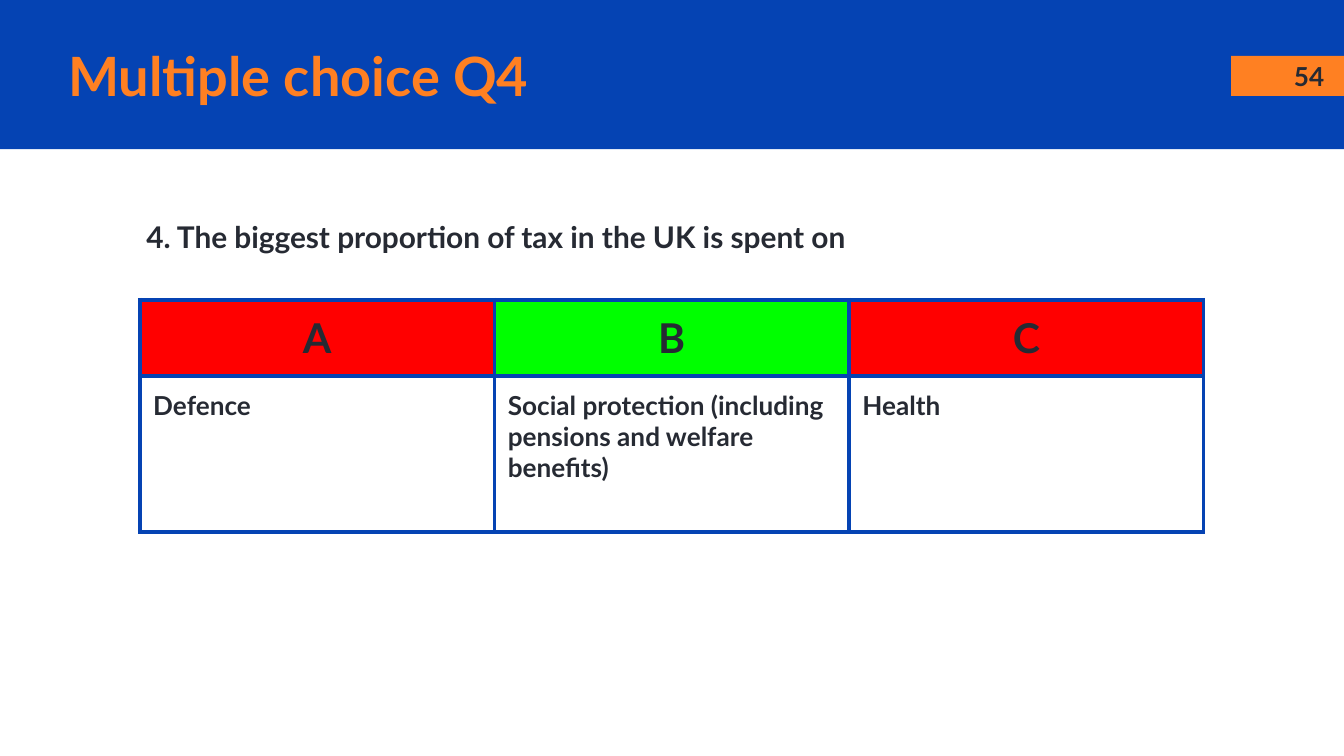
"""Build the multiple choice question slide with its answer table."""
from lxml.etree import SubElement
from pptx import Presentation
from pptx.dml.color import RGBColor
from pptx.enum.shapes import MSO_SHAPE as Shape
from pptx.enum.text import MSO_ANCHOR as Anchor, PP_ALIGN as Align
from pptx.oxml.ns import qn
from pptx.util import Pt

BLUE, ORANGE, DARK = "0543B3", "FF8022", "262A33"
RED, GREEN = "FF0000", "00FF00"
INSET = Pt(7.2)


def color(value):
    return RGBColor.from_string(value)


def write(frame, text, size, ink=DARK, align=Align.LEFT):
    frame.word_wrap = True
    para = frame.paragraphs[0]
    para.alignment = align
    span = para.add_run()
    span.text = text
    span.font.name = "Lato"
    span.font.size = Pt(size)
    span.font.bold = True
    span.font.color.rgb = color(ink)


deck = Presentation()
deck.slide_width, deck.slide_height = Pt(720), Pt(405)
page = deck.slides.add_slide(deck.slide_layouts[6])

for left, top, width, height, fill in [
    (0, 0, 720, 80, BLUE),
    (659.5, 30, 60.5, 21.5, ORANGE),
]:
    band = page.shapes.add_shape(Shape.RECTANGLE, Pt(left), Pt(top), Pt(width), Pt(height))
    band.shadow.inherit = False
    band.fill.solid()
    band.fill.fore_color.rgb = color(fill)
    band.line.fill.background()

for left, top, width, height, text, size, ink, align, anchor in [
    (29.5, 20.2, 629.3, 40.3, "Multiple choice Q4", 29, ORANGE, Align.LEFT, Anchor.MIDDLE),
    (682.6, 31.7, 37.4, 18, "54", 14, DARK, Align.CENTER, Anchor.MIDDLE),
    (71.3, 110.2, 603.4, 60.5, "4. The biggest proportion of tax in the UK is spent on",
     16, DARK, Align.LEFT, Anchor.TOP),
]:
    box = page.shapes.add_textbox(Pt(left), Pt(top), Pt(width), Pt(height))
    frame = box.text_frame
    frame.margin_left = frame.margin_right = INSET
    frame.margin_top = frame.margin_bottom = INSET
    frame.vertical_anchor = anchor
    write(frame, text, size, ink, align)

answers = [
    ("A", "Defence", RED),
    ("B", "Social protection (including pensions and welfare benefits)", GREEN),
    ("C", "Health", RED),
]
table = page.shapes.add_table(2, 3, Pt(74.9), Pt(160.6), Pt(570), Pt(124.5)).table
table.first_row = table.horz_banding = False
for row, height in zip(table.rows, (40.8, 83.7)):
    row.height = Pt(height)

for index, (letter, answer, fill) in enumerate(answers):
    table.columns[index].width = Pt(190)
    head, body = table.cell(0, index), table.cell(1, index)
    for cell in (head, body):
        cell.margin_left = cell.margin_right = INSET
        cell.margin_top = cell.margin_bottom = INSET
        props = cell._tc.get_or_add_tcPr()
        for side in ("a:lnL", "a:lnR", "a:lnT", "a:lnB"):
            line = SubElement(props, qn(side), w=str(Pt(2.25)))
            SubElement(SubElement(line, qn("a:solidFill")), qn("a:srgbClr"), val=BLUE)
    head.fill.solid()
    head.fill.fore_color.rgb = color(fill)
    body.fill.background()
    write(head.text_frame, letter, 22, align=Align.CENTER)
    write(body.text_frame, answer, 14)

deck.save("out.pptx")
